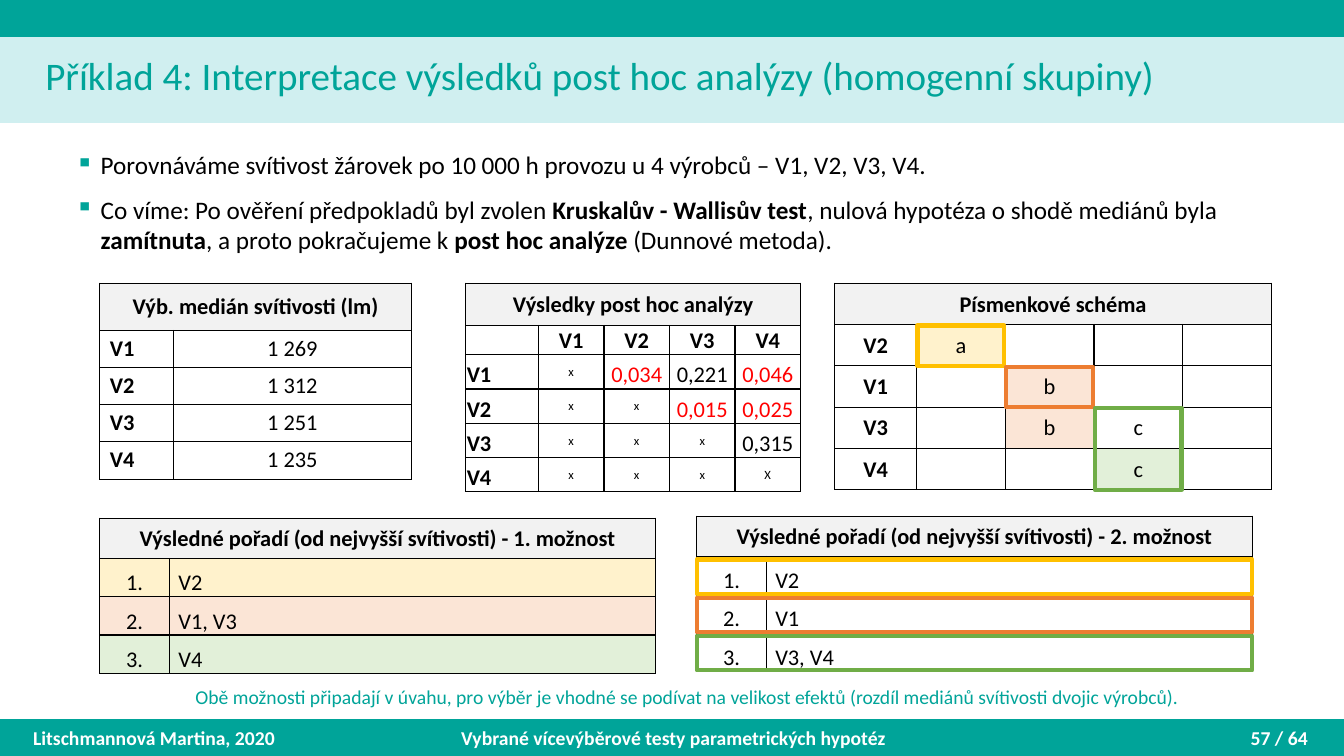
from typing import NamedTuple, Optional

from lxml import etree
from pptx import Presentation
from pptx.dml.color import RGBColor
from pptx.enum.shapes import MSO_SHAPE
from pptx.enum.text import MSO_ANCHOR, MSO_AUTO_SIZE, PP_ALIGN
from pptx.oxml.ns import qn
from pptx.util import Pt

PX = 9144  # 100 px to the inch
FONT = "Calibri"
LEFT, CENTER, RIGHT = PP_ALIGN.LEFT, PP_ALIGN.CENTER, PP_ALIGN.RIGHT
TOP, MIDDLE, BOTTOM = MSO_ANCHOR.TOP, MSO_ANCHOR.MIDDLE, MSO_ANCHOR.BOTTOM
RECTANGLE = MSO_SHAPE.RECTANGLE

TEAL = RGBColor(0x00, 0xA4, 0x99)
PALE_TEAL = RGBColor(0xD0, 0xEF, 0xF0)
WHITE = RGBColor(0xFF, 0xFF, 0xFF)
BLACK = RGBColor(0x00, 0x00, 0x00)
RED = RGBColor(0xFF, 0x00, 0x00)
GREY = RGBColor(0xF2, 0xF2, 0xF2)
YELLOW, PALE_YELLOW = RGBColor(0xFF, 0xC0, 0x00), RGBColor(0xFF, 0xF2, 0xCC)
ORANGE, PALE_ORANGE = RGBColor(0xED, 0x7D, 0x31), RGBColor(0xFB, 0xE5, 0xD6)
GREEN, PALE_GREEN = RGBColor(0x70, 0xAD, 0x47), RGBColor(0xE2, 0xF0, 0xD9)
GROUP_LINES = (YELLOW, ORANGE, GREEN)
GROUP_FILLS = (PALE_YELLOW, PALE_ORANGE, PALE_GREEN)

TIGHT = (1, 1, 1, 0)
ROOMY = (10, 5, 10, 5)
MAKERS = ("V1", "V2", "V3", "V4")


class Cell(NamedTuple):
    text: str = ""
    bold: bool = False
    color: RGBColor = BLACK
    size: int = 16
    align: PP_ALIGN = CENTER
    anchor: MSO_ANCHOR = MIDDLE
    fill: Optional[RGBColor] = None
    indent: int = 0


def scaled(*lengths):
    return [length * PX for length in lengths]


def add_run(paragraph, text, size, color, bold=False):
    run = paragraph.add_run()
    run.text = text
    run.font.name, run.font.size, run.font.bold = FONT, Pt(size), bold
    run.font.color.rgb = color


def add_rectangle(slide, box, line, width, fill=None):
    shape = slide.shapes.add_shape(RECTANGLE, *scaled(*box))
    shape.shadow.inherit = False
    if fill is None:
        shape.fill.background()
    else:
        shape.fill.solid()
        shape.fill.fore_color.rgb = fill
    shape.line.color.rgb = line
    shape.line.width = Pt(width)


def add_text(slide, box, text, color, align=LEFT, anchor=TOP, bold=False, wrap=True):
    frame = slide.shapes.add_textbox(*scaled(*box)).text_frame
    frame.word_wrap = wrap
    frame.vertical_anchor = anchor
    if not wrap:
        frame.auto_size = MSO_AUTO_SIZE.SHAPE_TO_FIT_TEXT
    frame.paragraphs[0].alignment = align
    add_run(frame.paragraphs[0], text, 14, color, bold)


def add_header(slide, width):
    add_rectangle(slide, (0, 36, width, 86), PALE_TEAL, 0.75, PALE_TEAL)
    add_rectangle(slide, (0, 0, width, 36), TEAL, 1, TEAL)
    title = slide.shapes.title
    slide.shapes._spTree.append(title._element)  # bring in front of the bands
    title.left, title.top, title.width, title.height = scaled(35, 40, 1188, 81)
    frame = title.text_frame
    frame.word_wrap, frame.auto_size = True, MSO_AUTO_SIZE.NONE
    frame.vertical_anchor = MIDDLE
    paragraph = frame.paragraphs[0]
    paragraph.alignment, paragraph.line_spacing = LEFT, 0.7
    add_run(paragraph, "Příklad 4: Interpretace výsledků post hoc analýzy (homogenní skupiny)", 27.9, TEAL)


def add_footer(slide, top, width):
    add_rectangle(slide, (0, top, width, 36), TEAL, 1, TEAL)
    for left, box_width, text, align in (
        (23, 300, "Litschmannová Martina, 2020", LEFT),
        (443, 450, "Vybrané vícevýběrové testy parametrických hypotéz", CENTER),
        (1007, 300, "57 / 64", RIGHT),
    ):
        add_text(slide, (left, top, box_width, 36), text, WHITE, align, MIDDLE, bold=True)


def add_introduction(slide, box):
    frame = slide.shapes.add_textbox(*scaled(*box)).text_frame
    frame.word_wrap = True
    bullets = (
        (0.9, 0, (("Porovnáváme svítivost žárovek po 10 000 h provozu u 4 výrobců – V1, V2, V3, V4.", False),)),
        (1.0, 10, (
            ("Co víme: Po ověření předpokladů byl zvolen ", False),
            ("Kruskalův - Wallisův test", True),
            (", nulová hypotéza o shodě mediánů byla ", False),
            ("zamítnuta", True),
            (", a proto pokračujeme k ", False),
            ("post hoc analýze ", True),
            ("(Dunnové metoda).", False),
        )),
    )
    for index, (spacing, before, parts) in enumerate(bullets):
        paragraph = frame.add_paragraph() if index else frame.paragraphs[0]
        properties = paragraph._p.get_or_add_pPr()
        properties.set("marL", str(25 * PX))
        properties.set("indent", str(-25 * PX))
        color = etree.SubElement(properties, qn("a:buClr"))
        etree.SubElement(color, qn("a:srgbClr"), val=str(TEAL))
        etree.SubElement(properties, qn("a:buChar"), char="▪")
        paragraph.line_spacing, paragraph.space_before = spacing, Pt(before)
        for text, bold in parts:
            add_run(paragraph, text, 18, BLACK, bold)


def format_cell(cell, content, margins):
    properties = cell._tc.get_or_add_tcPr()
    for side in ("lnL", "lnR", "lnT", "lnB"):
        line = etree.SubElement(properties, qn(f"a:{side}"), w=str(Pt(1)))
        fill = etree.SubElement(line, qn("a:solidFill"))
        etree.SubElement(fill, qn("a:srgbClr"), val=str(BLACK))
    if content.fill is None:
        cell.fill.background()
    else:
        cell.fill.solid()
        cell.fill.fore_color.rgb = content.fill
    cell.margin_left, cell.margin_top, cell.margin_right, cell.margin_bottom = scaled(*margins)
    cell.margin_left += content.indent * PX
    cell.vertical_anchor = content.anchor
    paragraph = cell.text_frame.paragraphs[0]
    paragraph.alignment = content.align
    if content.text:
        add_run(paragraph, content.text, content.size, content.color, content.bold)
    else:
        etree.SubElement(paragraph._p, qn("a:endParaRPr"), sz=str(content.size * 100))


def add_grid(slide, left, top, widths, heights, heading, rows, margins=TIGHT):
    """Draw a table whose first row is one merged heading."""
    box = scaled(left, top, sum(widths), sum(heights))
    table = slide.shapes.add_table(len(heights), len(widths), *box).table
    table.first_row = table.horz_banding = False
    for column, width in zip(table.columns, widths):
        column.width = width * PX
    for row, height in zip(table.rows, heights):
        row.height = height * PX
    table.cell(0, 0).merge(table.cell(0, len(widths) - 1))
    heading_row = [Cell(heading, True, fill=GREY)] + [Cell(fill=GREY)] * (len(widths) - 1)
    for row, contents in zip(table.rows, [heading_row, *rows]):
        for cell, content in zip(row.cells, contents):
            format_cell(cell, content, margins)


def add_medians(slide, left, top):
    rows = [
        (Cell(maker, True, align=LEFT, anchor=TOP, fill=WHITE), Cell(median, anchor=TOP, fill=WHITE))
        for maker, median in zip(MAKERS, ("1 269", "1 312", "1 251", "1 235"))
    ]
    add_grid(slide, left, top, (73, 236), (47, 35, 35, 35, 38), "Výb. medián svítivosti (lm)", rows, ROOMY)


def add_post_hoc(slide, left, top):
    values = (("x", "0,034", "0,221", "0,046"), ("x", "x", "0,015", "0,025"),
              ("x", "x", "x", "0,315"), ("x", "x", "x", "X"))

    def value_cell(text):
        if text in "xX":
            return Cell(text, size=9)
        significant = float(text.replace(",", ".")) < 0.05
        return Cell(text, color=RED if significant else BLACK, anchor=BOTTOM)

    rows = [[Cell()] + [Cell(maker, True, anchor=BOTTOM) for maker in MAKERS]]
    for maker, line in zip(MAKERS, values):
        rows.append([Cell(maker, True, align=LEFT, anchor=BOTTOM), *map(value_cell, line)])
    add_grid(slide, left, top, (72, *[65] * 4), (42, 29, *[34] * 4), "Výsledky post hoc analýzy", rows)


def add_letter_scheme(slide, left, top):
    first, width, height = 81, 88, 41
    tinted = {"a": PALE_YELLOW, "b": PALE_ORANGE, "c": PALE_GREEN}
    letters = (("V2", "a", "", "", ""), ("V1", "", "b", "", ""),
               ("V3", "", "b", "c", ""), ("V4", "", "", "c", ""))
    rows = []
    for maker, *line in letters:
        fills = [None if (maker, letter) == ("V3", "c") else tinted.get(letter) for letter in line]
        rows.append([Cell(maker, True)] + [Cell(letter, fill=fill) for letter, fill in zip(line, fills)])
    add_grid(slide, left, top, (first, *[width] * 4), [height] * 5, "Písmenkové schéma", rows)
    for index, (color, span) in enumerate(zip(GROUP_LINES, (1, 1, 2))):
        frame = (left + first + index * width + 1, top + (index + 1) * height + 1,
                 width - 2, span * height - 1)
        add_rectangle(slide, frame, color, 3)


def add_ranking(slide, left, top, option, groups, framed):
    widths, heading, height = (69, 482), 40, 38
    fills = [None] * 3 if framed else GROUP_FILLS
    rows = [
        (Cell(f"{place}.", anchor=BOTTOM, fill=fill), Cell(group, align=LEFT, anchor=BOTTOM, fill=fill, indent=8))
        for place, (group, fill) in enumerate(zip(groups, fills), 1)
    ]
    title = f"Výsledné pořadí (od nejvyšší svítivosti) - {option}. možnost"
    add_grid(slide, left, top, widths, (heading, *[height] * 3), title, rows)
    if framed:
        for index, color in enumerate(GROUP_LINES):
            frame = (left, top + heading + index * height + 3, sum(widths), height - 4)
            add_rectangle(slide, frame, color, 3)


def main():
    presentation = Presentation()
    presentation.slide_width, presentation.slide_height = scaled(1333, 750)
    slide = presentation.slides.add_slide(presentation.slide_layouts[5])
    add_header(slide, 1333)
    add_footer(slide, 714, 1333)
    add_introduction(slide, (65, 147, 1229, 120))
    add_medians(slide, 99, 281)
    add_post_hoc(slide, 462, 281)
    add_letter_scheme(slide, 828, 281)
    add_ranking(slide, 99, 514, 1, ("V2", "V1, V3", "V4"), framed=False)
    add_ranking(slide, 691, 512, 2, ("V2", "V1", "V3, V4"), framed=True)
    note = ("Obě možnosti připadají v úvahu, pro výběr je vhodné se podívat na velikost efektů "
            "(rozdíl mediánů svítivosti dvojic výrobců).")
    add_text(slide, (184, 675, 1026, 34), note, TEAL, wrap=False)
    presentation.save("out.pptx")


if __name__ == "__main__":
    main()
